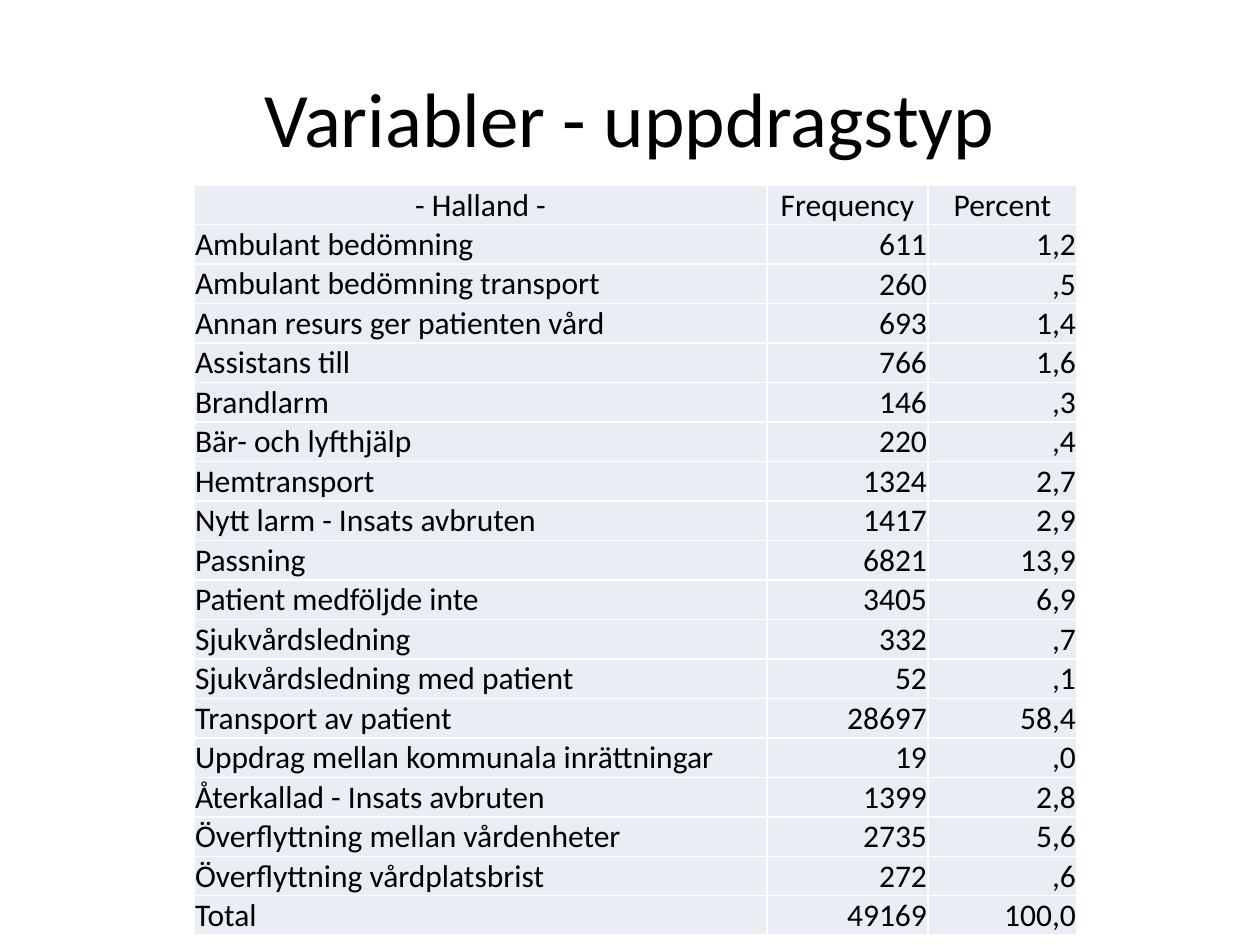
import pptx
import pptx.util
import pptx.dml.color
import pptx.enum.text
import pptx.oxml
import pptx.oxml.ns

RGB = pptx.dml.color.RGBColor
BLACK = RGB(0x00, 0x00, 0x00)
WHITE = RGB(0xFF, 0xFF, 0xFF)
PALE = RGB(0xE9, 0xED, 0xF4)
ALIGN = pptx.enum.text.PP_ALIGN
ANCHOR = pptx.enum.text.MSO_ANCHOR
SCALE = 914400 / 126
FONT = "Calibri"

HEAD = ("- Halland -", "Frequency", "Percent")
ROWS = [
    ("Ambulant bedömning", "611", "1,2"),
    ("Ambulant bedömning transport", "260", ",5"),
    ("Annan resurs ger patienten vård", "693", "1,4"),
    ("Assistans till", "766", "1,6"),
    ("Brandlarm", "146", ",3"),
    ("Bär- och lyfthjälp", "220", ",4"),
    ("Hemtransport", "1324", "2,7"),
    ("Nytt larm - Insats avbruten", "1417", "2,9"),
    ("Passning", "6821", "13,9"),
    ("Patient medföljde inte", "3405", "6,9"),
    ("Sjukvårdsledning", "332", ",7"),
    ("Sjukvårdsledning med patient", "52", ",1"),
    ("Transport av patient", "28697", "58,4"),
    ("Uppdrag mellan kommunala inrättningar", "19", ",0"),
    ("Återkallad - Insats avbruten", "1399", "2,8"),
    ("Överflyttning mellan vårdenheter", "2735", "5,6"),
    ("Överflyttning vårdplatsbrist", "272", ",6"),
    ("Total", "49169", "100,0"),
]


def px(num):
    """Turn pixels into EMU."""
    return pptx.util.Emu(round(num * SCALE))


def write(frame, text, size=18, color=BLACK, align=ALIGN.LEFT):
    """Put one formatted paragraph into a text frame."""
    para = frame.paragraphs[0]
    para.alignment = align
    run = para.add_run()
    run.text = text
    run.font.name = FONT
    run.font.size = pptx.util.Pt(size)
    run.font.color.rgb = color


def edge(cell, color=WHITE, width=1):
    """Draw a thin line on all four sides of a cell."""
    props = cell._tc.get_or_add_tcPr()
    for spot, side in enumerate(("lnL", "lnR", "lnT", "lnB")):
        line = pptx.oxml.parse_xml(
            f'<a:{side} {pptx.oxml.ns.nsdecls("a")} w="{pptx.util.Pt(width)}">'
            f'<a:solidFill><a:srgbClr val="{color}"/></a:solidFill></a:{side}>'
        )
        props.insert(spot, line)


def fill_cell(cell, text, align, anchor):
    """Fill, frame and write one table cell."""
    cell.fill.solid()
    cell.fill.fore_color.rgb = PALE
    cell.margin_left = cell.margin_right = cell.margin_top = px(1)
    cell.margin_bottom = 0
    cell.vertical_anchor = anchor
    write(cell.text_frame, text, align=align)
    edge(cell)


def add_title(slide, box, text):
    """Place the title in its box."""
    title = slide.shapes.title
    title.left, title.top, title.width, title.height = map(px, box)
    title.text_frame.vertical_anchor = ANCHOR.MIDDLE
    write(title.text_frame, text, size=44, align=ALIGN.CENTER)


def add_grid(slide, box, head, rows, parts):
    """Place the table in its box, with columns shared out by parts."""
    left, top, width, height = box
    data = [head, *rows]
    table = slide.shapes.add_table(len(data), len(head), *map(px, box)).table
    table.first_row = table.horz_banding = False
    for col, part in zip(table.columns, parts):
        col.width = px(width * part / sum(parts))
    for r, items in enumerate(data):
        table.rows[r].height = px(height / len(data))
        for c, text in enumerate(items):
            if r == 0:
                align, anchor = ALIGN.CENTER, ANCHOR.BOTTOM
            elif c == 0:
                align, anchor = ALIGN.LEFT, ANCHOR.TOP
            else:
                align, anchor = ALIGN.RIGHT, ANCHOR.MIDDLE
            fill_cell(table.cell(r, c), text, align, anchor)


def main():
    """Build the slide and save it."""
    deck = pptx.Presentation()
    deck.slide_width, deck.slide_height = px(1260), px(945)
    slide = deck.slides.add_slide(deck.slide_layouts[5])
    add_title(slide, (63, 38, 1134, 158), "Variabler - uppdragstyp")
    add_grid(slide, (194, 185, 883, 736), HEAD, ROWS, (573, 161, 149))
    deck.save("out.pptx")


if __name__ == "__main__":
    main()
